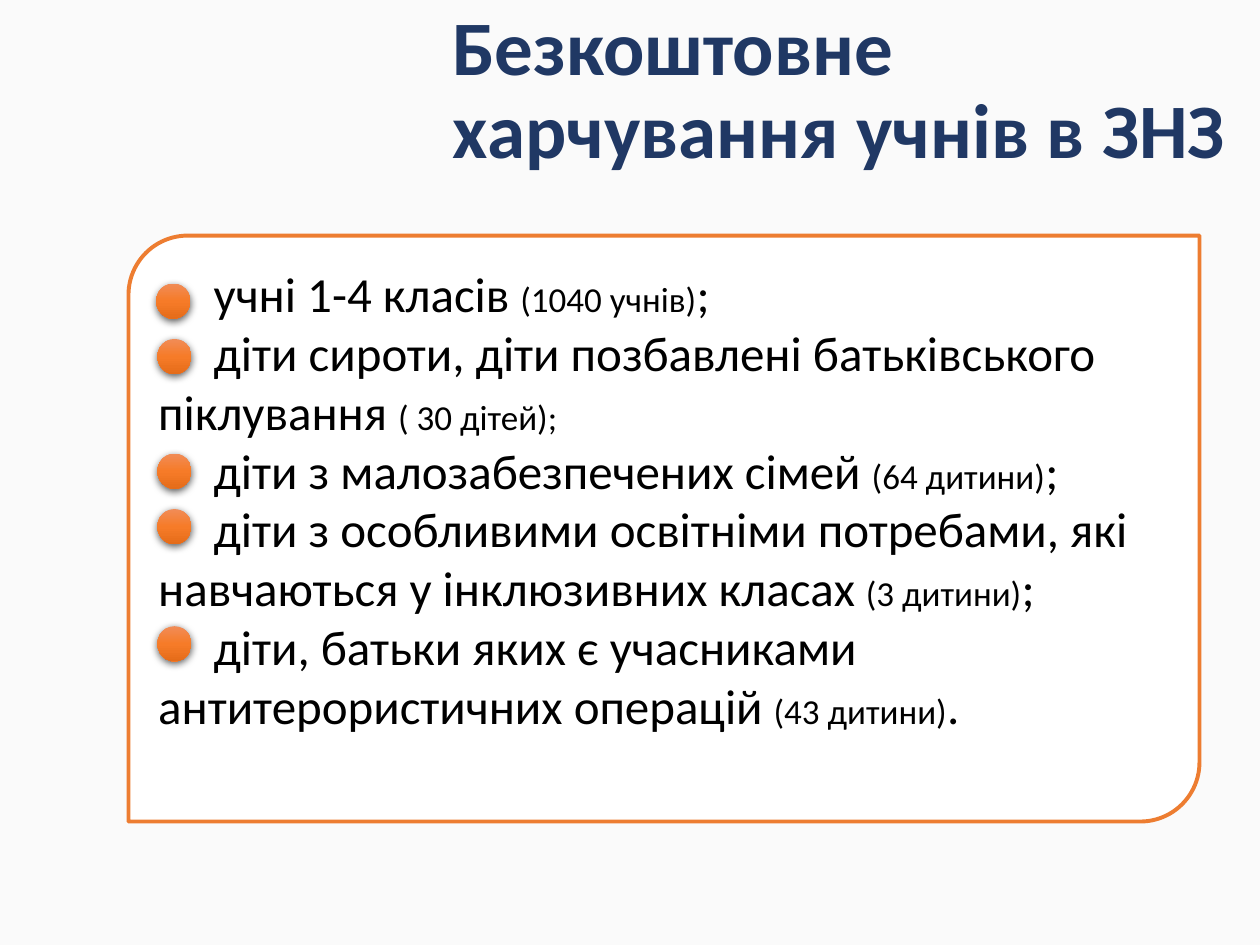
from dataclasses import dataclass

from lxml.etree import SubElement
from pptx import Presentation
from pptx.dml.color import RGBColor
from pptx.enum.shapes import MSO_SHAPE as Preset
from pptx.enum.text import MSO_ANCHOR as Anchor, PP_ALIGN as Align
from pptx.oxml import parse_xml
from pptx.oxml.ns import nsdecls, qn
from pptx.util import Inches, Pt

FONT = "Calibri"
LARGE, SMALL = 28, 20
MARKER_WIDTH, MARKER_HEIGHT = 0.27, 0.28
MARKER_STOPS = ((0, "F18C57"), (50, "F67B28"), (100, "E56C19"))


@dataclass(frozen=True)
class Category:
    pupils: str
    count: str
    ending: str
    marker_left: float
    marker_top: float


CATEGORIES = (
    Category("учні 1-4 класів ", "(1040 учнів)", ";", 1.24, 2.25),
    Category("діти сироти, діти позбавлені батьківського піклування ",
             "( 30 дітей);", "", 1.25, 2.69),
    Category("діти з малозабезпечених сімей ", "(64 дитини)", ";", 1.25, 3.6),
    Category("діти з особливими освітніми потребами, які навчаються у інклюзивних класах ",
             "(3 дитини)", ";", 1.25, 4.04),
    Category("діти, батьки яких є учасниками антитерористичних операцій ",
             "(43 дитини)", ".", 1.25, 4.97),
)


def color(value: str) -> RGBColor:
    return RGBColor.from_string(value)


def apply_format(target, values: dict) -> None:
    for name, value in values.items():
        setattr(target, name, value)


def add_run(paragraph, text: str, size: float, ink: str, bold: bool = False):
    run = paragraph.add_run()
    run.text = text
    apply_format(run.font, {"name": FONT, "size": Pt(size), "bold": bold})
    run.font.color.rgb = color(ink)
    return run


def add_heading(slide) -> None:
    heading = slide.shapes.add_textbox(Inches(3.49), Inches(0.02), Inches(6.45), Inches(0.77))
    heading.text_frame.word_wrap = True
    paragraph = heading.text_frame.paragraphs[0]
    paragraph.line_spacing = 0.9
    run = add_run(paragraph, "Безкоштовне харчування учнів в ЗНЗ", 44, "203864", True)
    outline = parse_xml(
        f'<a:ln {nsdecls("a")} w="{Pt(0.75)}"><a:solidFill>'
        '<a:srgbClr val="FFFFFF"/></a:solidFill></a:ln>')
    run.font._element.insert(0, outline)


def add_category_panel(slide, categories: tuple[Category, ...]) -> None:
    panel = slide.shapes.add_shape(
        Preset.ROUND_2_DIAG_RECTANGLE, Inches(1.02), Inches(1.87), Inches(8.5), Inches(4.65))
    panel.adjustments[0], panel.adjustments[1] = 0.101, 0
    panel.shadow.inherit = False
    panel.fill.solid()
    panel.fill.fore_color.rgb = color("FFFFFF")
    panel.line.color.rgb = color("ED7D31")
    panel.line.width = Pt(2.25)
    frame = panel.text_frame
    apply_format(frame, {"word_wrap": True, "vertical_anchor": Anchor.MIDDLE,
                         "margin_bottom": Inches(0.52)})
    for index, category in enumerate(categories):
        paragraph = frame.add_paragraph() if index else frame.paragraphs[0]
        paragraph.alignment = Align.LEFT
        paragraph._p.get_or_add_pPr().set("indent", str(Inches(0.44)))
        for text, size in ((category.pupils, LARGE), (category.count, SMALL),
                           (category.ending, LARGE)):
            if text:
                add_run(paragraph, text, size, "000000")


def add_marker(slide, category: Category) -> None:
    marker = slide.shapes.add_shape(
        Preset.OVAL, Inches(category.marker_left), Inches(category.marker_top),
        Inches(MARKER_WIDTH), Inches(MARKER_HEIGHT))
    marker.line.fill.background()
    marker.shadow.inherit = False
    properties = marker._element.spPr
    stops = "".join(f'<a:gs pos="{position * 1000}"><a:srgbClr val="{shade}"/></a:gs>'
                    for position, shade in MARKER_STOPS)
    properties.insert(2, parse_xml(
        f'<a:gradFill {nsdecls("a")}><a:gsLst>{stops}</a:gsLst>'
        '<a:lin ang="5400000" scaled="0"/></a:gradFill>'))
    shadow = SubElement(properties.find(qn("a:effectLst")), qn("a:outerShdw"),
                        blurRad=str(Pt(4.5)), dist=str(Pt(1.5)), dir="5400000",
                        algn="ctr", rotWithShape="0")
    shade = SubElement(shadow, qn("a:srgbClr"), val="000000")
    SubElement(shade, qn("a:alpha"), val="63000")


def main() -> None:
    deck = Presentation()
    apply_format(deck, {"slide_width": Inches(10), "slide_height": Inches(7.5)})
    slide = deck.slides.add_slide(deck.slide_layouts[6])
    slide.background.fill.solid()
    slide.background.fill.fore_color.rgb = color("FAFAFA")
    add_heading(slide)
    add_category_panel(slide, CATEGORIES)
    for category in CATEGORIES:
        add_marker(slide, category)
    deck.save("out.pptx")


if __name__ == "__main__":
    main()
